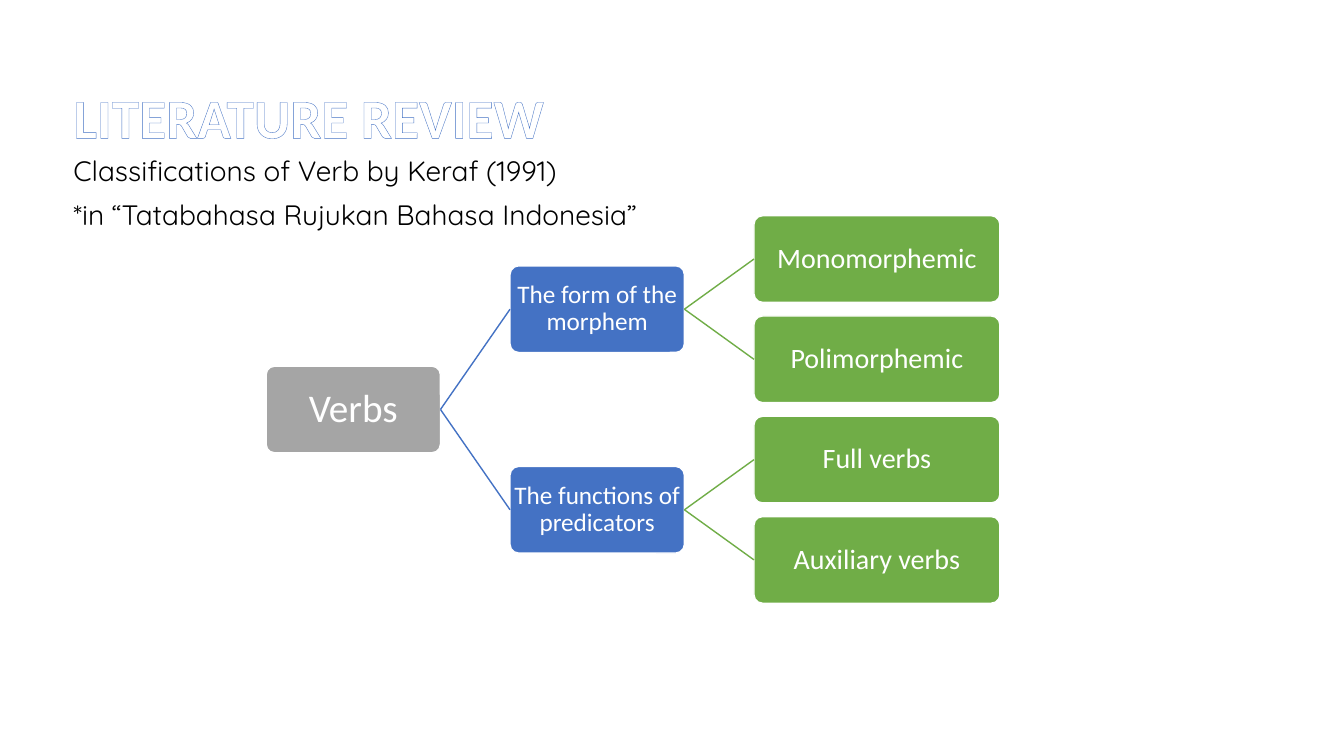
import pptx
import pptx.util
import pptx.dml.color
import pptx.enum.shapes
import pptx.enum.text
import pptx.oxml
import lxml.etree

RGB = pptx.dml.color.RGBColor.from_string
ALIGN = pptx.enum.text.PP_ALIGN
ANCHOR = pptx.enum.text.MSO_ANCHOR
SHAPES = pptx.enum.shapes
A = "http://schemas.openxmlformats.org/drawingml/2006/main"

THEME = {
    "white": "FFFFFF", "black": "000000", "outline": "4472C4",
    "levels": [  # fill, type size and box width of each tree level
        {"fill": "A5A5A5", "size": 28, "width": 1.73},
        {"fill": "4472C4", "size": 18, "width": 1.73},
        {"fill": "70AD47", "size": 20, "width": 2.44},
    ],
    "title": 39.6, "subtitle": 20,
    "font": "Calibri", "subtitle_font": "Quicksand",
}
LEFT, TEXT_WIDTH = 0.63, 11.5
TREE_LEFT, COLUMN = 2.64, 2.42
TREE_TOP, ROW, BOX_HEIGHT = 2.14, 0.995, 0.86

# label, level, row, index of the parent
NODES = [
    ("Verbs", 0, 1.5, None),
    ("The form of the morphem", 1, 0.5, 0),
    ("Monomorphemic", 2, 0, 1),
    ("Polimorphemic", 2, 1, 1),
    ("The functions of predicators", 1, 2.5, 0),
    ("Full verbs", 2, 2, 4),
    ("Auxiliary verbs", 2, 3, 4),
]


def inches(*values):
    return [pptx.util.Inches(v) for v in values]


def write(p, text, size, color, font, **paragraph_format):
    r = p.add_run()
    r.text = text
    for name, value in {"line_spacing": 0.9, **paragraph_format}.items():
        setattr(p, name, value)
    for name, value in {"size": pptx.util.Pt(size), "name": font}.items():
        setattr(r.font, name, value)
    r.font.color.rgb = RGB(color)
    return r


prs = pptx.Presentation()
prs.slide_width, prs.slide_height = inches(13.333, 7.5)
s = prs.slides.add_slide(prs.slide_layouts[5])

# Title with outlined letters
title = s.shapes.title
title.left, title.top, title.width, title.height = inches(LEFT, 0.88, TEXT_WIDTH, 0.63)
tf = title.text_frame
tf.auto_size = pptx.enum.text.MSO_AUTO_SIZE.NONE
tf.vertical_anchor = ANCHOR.MIDDLE
r = write(tf.paragraphs[0], "LITERATURE REVIEW", THEME["title"], THEME["white"],
          THEME["font"], alignment=ALIGN.LEFT)
r.font.bold = True
r.font._element.insert(0, pptx.oxml.parse_xml(
    f'<a:ln xmlns:a="{A}" w="10160"><a:solidFill>'
    f'<a:srgbClr val="{THEME["outline"]}"/></a:solidFill></a:ln>'))

# Subtitle
sp = s.shapes.add_textbox(*inches(LEFT, 1.51, TEXT_WIDTH, 4.76))
tf = sp.text_frame
tf.word_wrap = True
for i, line in enumerate(["Classifications of Verb by Keraf (1991)",
                          "*in “Tatabahasa Rujukan Bahasa Indonesia”"]):
    p = tf.add_paragraph() if i else tf.paragraphs[0]
    write(p, line, THEME["subtitle"], THEME["black"], THEME["subtitle_font"],
          space_before=pptx.util.Pt(10 if i else 0))

# Tree of verb classes
boxes = []
for label, level, row, parent in NODES:
    style = THEME["levels"][level]
    sp = s.shapes.add_shape(
        SHAPES.MSO_SHAPE.ROUNDED_RECTANGLE,
        *inches(TREE_LEFT + level * COLUMN, TREE_TOP + row * ROW, style["width"], BOX_HEIGHT))
    sp.adjustments[0] = 0.1
    sp.shadow.inherit = False
    sp.fill.solid()
    sp.fill.fore_color.rgb = RGB(style["fill"])
    sp.line.color.rgb = RGB(THEME["white"])
    sp.line.width = pptx.util.Pt(1)
    tf = sp.text_frame
    margins = dict.fromkeys(["margin_left", "margin_top", "margin_right", "margin_bottom"],
                            pptx.util.Inches(0.01))
    for name, value in {"word_wrap": True, "vertical_anchor": ANCHOR.MIDDLE, **margins}.items():
        setattr(tf, name, value)
    write(tf.paragraphs[0], label, style["size"], THEME["white"], THEME["font"],
          alignment=ALIGN.CENTER)
    boxes.append(sp)

    if parent is not None:
        link = s.shapes.add_connector(SHAPES.MSO_CONNECTOR.STRAIGHT, 0, 0, 0, 0)
        link.begin_connect(boxes[parent], 3)
        link.end_connect(sp, 1)
        link.line.color.rgb = RGB(style["fill"])
        link.line.width = pptx.util.Pt(1)
        lxml.etree.SubElement(link._element.spPr, f"{{{A}}}effectLst")

prs.save("out.pptx")
